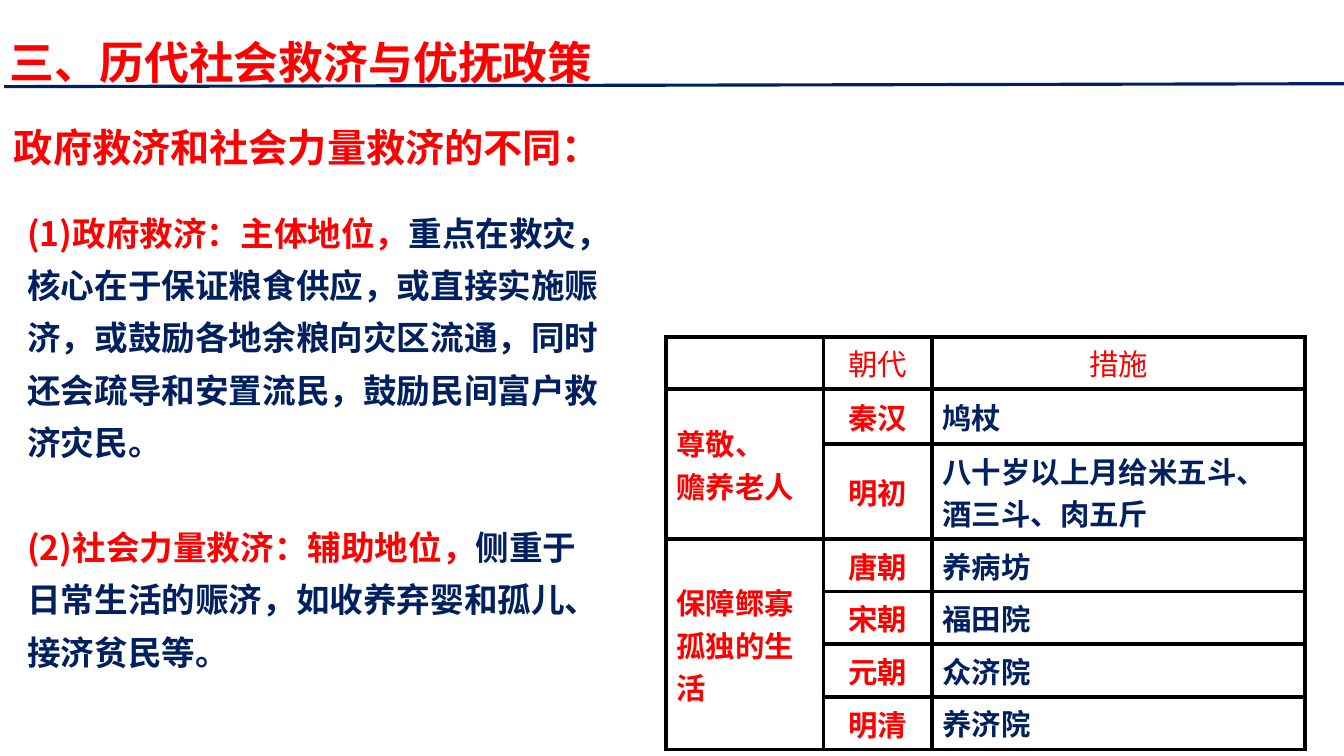
from lxml import etree
from pptx import Presentation
from pptx.dml.color import RGBColor
from pptx.enum import shapes, text
from pptx.oxml import ns
from pptx.util import Pt

RED, NAVY, BLACK = "FF0000", "002060", "000000"
SANS, HEAD = "Noto Sans CJK SC", "Noto Sans CJK JP"


def hue(code):
    return RGBColor.from_string(code)


def style(run, size, face, color, bold=True):
    font = run.font
    font.size, font.bold, font.name = Pt(size), bold, face
    font.color.rgb = hue(color)
    east = etree.SubElement(run._r.get_or_add_rPr(), ns.qn("a:ea"))
    east.set("typeface", face)


deck = Presentation()
deck.slide_width, deck.slide_height = Pt(960), Pt(540)
slide = deck.slides.add_slide(deck.slide_layouts[6])

cols = [112.3, 77.8, 266.4]
rows = [30, 39, 30, 30, 30, 30, 30]
cells = [
    ["", "朝代", "措施"],
    ["尊敬、\n赡养老人", "秦汉", "鸠杖"],
    ["", "明初", "八十岁以上月给米五斗、酒三斗、肉五斤"],
    ["保障鳏寡孤独的生活", "唐朝", "养病坊"],
    ["", "宋朝", "福田院"],
    ["", "元朝", "众济院"],
    ["", "明清", "养济院"],
]
frame = slide.shapes.add_table(
    len(rows), len(cols), Pt(475.9), Pt(240.5), Pt(sum(cols)), Pt(sum(rows)))
table = frame.table
table.first_row = table.horz_banding = False
for col, width in zip(table.columns, cols):
    col.width = Pt(width)
for row, height in zip(table.rows, rows):
    row.height = Pt(height)

for r, line in enumerate(cells):
    for c, words in enumerate(line):
        cell = table.cell(r, c)
        cell.fill.background()
        cell.margin_left = cell.margin_right = Pt(7.2)
        cell.margin_top = cell.margin_bottom = Pt(3.6)
        if r and (c < 2 or r == 1):
            cell.vertical_anchor = text.MSO_ANCHOR.MIDDLE
        cell.text_frame.text = words
        for para in cell.text_frame.paragraphs:
            if c == 1 or r == 0:
                para.alignment = text.PP_ALIGN.CENTER
            for run in para.runs:
                style(run, 21, SANS, NAVY if r and c == 2 else RED, r > 0)
        props = cell._tc.get_or_add_tcPr()
        for i, side in enumerate("LRTB"):
            edge = etree.Element(ns.qn("a:ln" + side), w=str(Pt(3)))
            fill = etree.SubElement(edge, ns.qn("a:solidFill"))
            etree.SubElement(fill, ns.qn("a:srgbClr"), val=BLACK)
            props.insert(i, edge)
table.cell(1, 0).merge(table.cell(2, 0))
table.cell(3, 0).merge(table.cell(6, 0))

points = [
    [("(1)政府救济：主体地位，", RED),
     ("重点在救灾，核心在于保证粮食供应，或直接实施赈济，或鼓励各地余粮向灾区流通，"
      "同时还会疏导和安置流民，鼓励民间富户救济灾民。", NAVY)],
    [("(2)社会力量救济：辅助地位，", RED),
     ("侧重于日常生活的赈济，如收养弃婴和孤儿、接济贫民等。", NAVY)],
]
title = [[("三、历代社会救济与优抚政策", RED)]]
topic = [[("政府救济和社会力量救济的不同：", RED)]]
boxes = [
    (points, 10.1, 138.2, 432, 350, 24, SANS, 1.3, True, 9.4, 5),
    (title, 0, 2.2, 644.4, 55.4, 32, HEAD, 1.5, True, 7.2, 3.6),
    (topic, 2.9, 74.2, 440.6, 51.1, 28, HEAD, 1.3, False, 7.2, 3.6),
]
for paras, x, y, w, h, size, face, lead, wrap, side, top in boxes:
    box = slide.shapes.add_textbox(Pt(x), Pt(y), Pt(w), Pt(h))
    body = box.text_frame
    body.word_wrap = wrap
    body.auto_size = text.MSO_AUTO_SIZE.SHAPE_TO_FIT_TEXT
    body.margin_left = body.margin_right = Pt(side)
    body.margin_top = body.margin_bottom = Pt(top)
    for i, parts in enumerate(paras):
        para = body.add_paragraph() if i else body.paragraphs[0]
        para.line_spacing = lead
        if i:
            para.space_before = Pt(37.5)
        if paras is title:
            para.alignment = text.PP_ALIGN.JUSTIFY
        for words, color in parts:
            run = para.add_run()
            run.text = words
            style(run, size, face, color)

rule = slide.shapes.add_connector(
    shapes.MSO_CONNECTOR.STRAIGHT, Pt(2.9), Pt(61.9), Pt(960), Pt(59.8))
rule.line.color.rgb = hue(NAVY)
rule.line.width = Pt(2.25)
etree.SubElement(rule._element.spPr, ns.qn("a:effectLst"))

deck.save("out.pptx")
